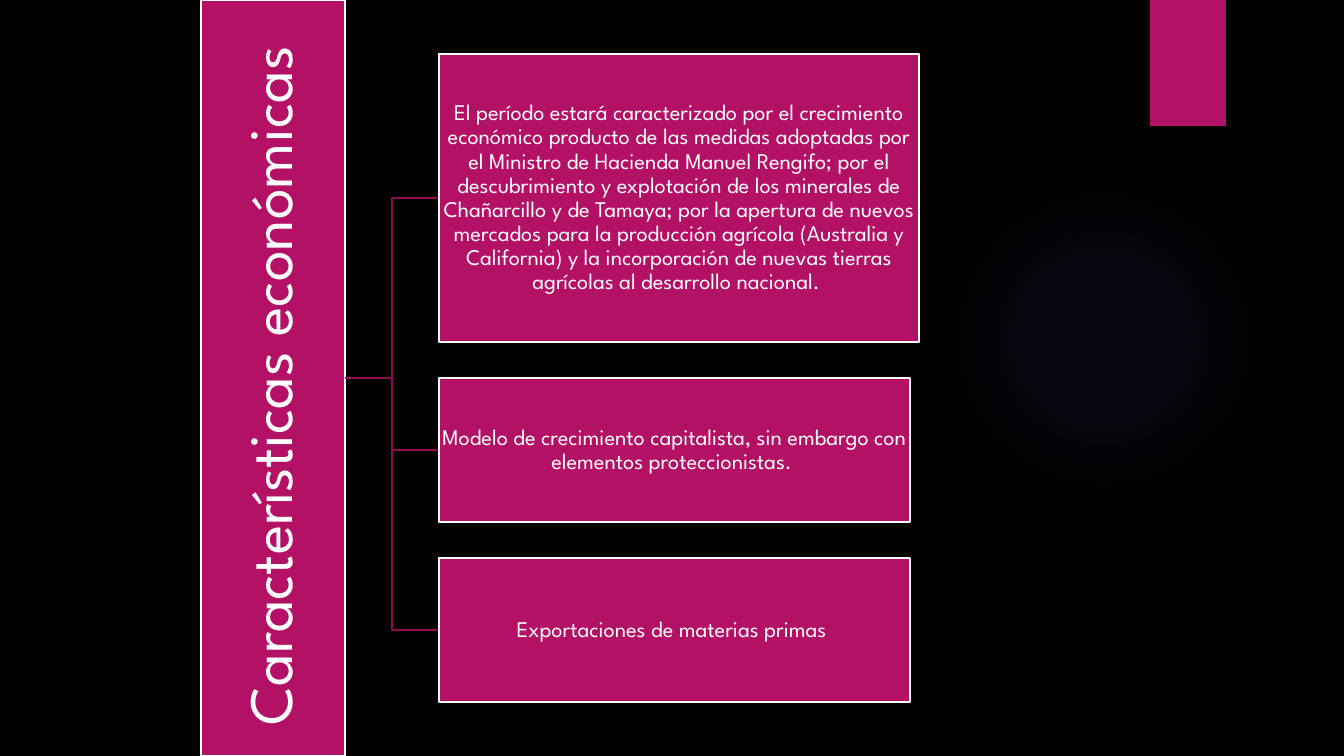
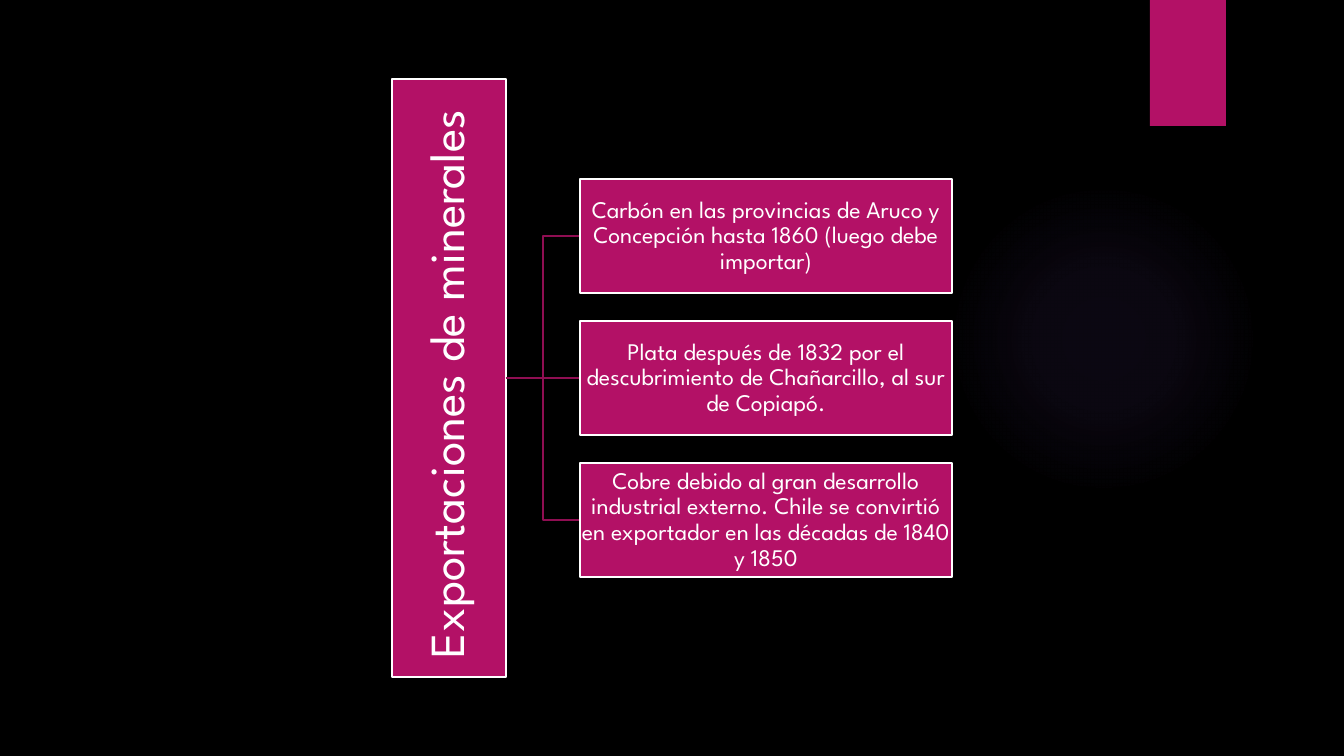
from lxml import etree
from pptx import Presentation
from pptx.dml.color import RGBColor
from pptx.enum.shapes import MSO_CONNECTOR, MSO_SHAPE
from pptx.enum.text import MSO_ANCHOR, MSO_AUTO_SIZE, PP_ALIGN
from pptx.oxml import parse_xml
from pptx.util import Pt

RECTANGLE, OVAL = MSO_SHAPE.RECTANGLE, MSO_SHAPE.OVAL
ELBOW, STRAIGHT = MSO_CONNECTOR.ELBOW, MSO_CONNECTOR.STRAIGHT
MIDDLE, CENTER = MSO_ANCHOR.MIDDLE, PP_ALIGN.CENTER

EMU_PER_PX = 914400 / 100.8
SLIDE_WIDTH, SLIDE_HEIGHT = 1344, 756
FONT = "League Spartan"
LINE_WIDTH = Pt(1.5)
COLORS = {
    "background": "000000",
    "accent": "B31166",
    "branch": "8F0E52",
    "glow": "9B6BF2",
    "text": "FFFFFF",
}
# Position and opacity of each glow stop, in percent
GLOW_STOPS = ((0, 7), (36, 6), (69, 0))
DRAWING_NS = "http://schemas.openxmlformats.org/drawingml/2006/main"

TREES = (
    {
        "title": "Características económicas ",
        "title_box": (201, 0, 144, 756),
        "title_size": 44,
        "left": 439,
        "gap": 36,
        "text_size": 16,
        # Width, height and text of each branch
        "branches": (
            (480, 288, "El período estará caracterizado por el crecimiento económico "
                       "producto de las medidas adoptadas por el Ministro de Hacienda "
                       "Manuel Rengifo; por el descubrimiento y explotación de los "
                       "minerales de Chañarcillo y de Tamaya; por la apertura de nuevos "
                       "mercados para la producción agrícola (Australia y California) y "
                       "la incorporación de nuevas tierras agrícolas al desarrollo "
                       "nacional. "),
            (471, 144, "Modelo de crecimiento capitalista, sin embargo con elementos "
                       "proteccionistas. "),
            (471, 144, "Exportaciones de materias primas "),
        ),
    },
    {
        "title": "Exportaciones de minerales ",
        "title_box": (392, 79, 114, 598),
        "title_size": 35,
        "left": 580,
        "gap": 28,
        "text_size": 17,
        "branches": (
            (372, 114, "Carbón en las provincias de Aruco y Concepción hasta 1860 "
                       "(luego debe importar)"),
            (372, 114, "Plata después de 1832 por el descubrimiento de Chañarcillo, "
                       "al sur de Copiapó."),
            (372, 114, "Cobre debido al gran desarrollo industrial externo. Chile se "
                       "convirtió en exportador en las décadas de 1840 y 1850"),
        ),
    },
)


def px(length):
    return round(length * EMU_PER_PX)


def color(name):
    return RGBColor.from_string(COLORS[name])


def add_plain_shape(slide, kind, box):
    shape = slide.shapes.add_shape(kind, *map(px, box))
    shape.shadow.inherit = False
    shape.fill.solid()
    shape.fill.fore_color.rgb = color("accent")
    shape.line.fill.background()
    return shape


def fill_with_glow(shape):
    stops = "".join(
        f'<a:gs pos="{position * 1000}"><a:srgbClr val="{COLORS["glow"]}">'
        f'<a:alpha val="{opacity * 1000}"/></a:srgbClr></a:gs>'
        for position, opacity in GLOW_STOPS
    )
    gradient = parse_xml(
        f'<a:gradFill xmlns:a="{DRAWING_NS}" rotWithShape="1"><a:gsLst>{stops}</a:gsLst>'
        '<a:path path="circle"><a:fillToRect l="50000" t="50000" r="50000" b="50000"/>'
        "</a:path></a:gradFill>"
    )
    properties = shape.element.spPr
    properties.replace(properties.find(f"{{{DRAWING_NS}}}solidFill"), gradient)


def decorate_layout(layout, slide):
    """Give the layout its background, glow and corner tab."""
    layout.background.fill.solid()
    layout.background.fill.fore_color.rgb = color("background")
    for placeholder in list(layout.placeholders)[1:]:
        layout.shapes.element.remove(placeholder.element)
    glow = add_plain_shape(slide, OVAL, (949, 184, 310, 310))
    fill_with_glow(glow)
    tab = add_plain_shape(slide, RECTANGLE, (1150, 0, 76, 126))
    # Shapes can only be created on a slide, so they are moved to the layout
    for shape in (glow, tab):
        layout.shapes.element.append(shape.element)


def format_text_box(shape, text, size, inset):
    """Accent box with a white outline and centred text."""
    shape.fill.solid()
    shape.fill.fore_color.rgb = color("accent")
    shape.line.color.rgb = color("text")
    shape.line.width = LINE_WIDTH
    frame = shape.text_frame
    frame.text = text
    frame.word_wrap = True
    frame.auto_size = MSO_AUTO_SIZE.NONE
    frame.vertical_anchor = MIDDLE
    frame.margin_left = frame.margin_right = px(inset)
    frame.margin_top = frame.margin_bottom = px(inset)
    paragraph = frame.paragraphs[0]
    paragraph.alignment = CENTER
    paragraph.line_spacing = 0.9
    paragraph.font.name = FONT
    paragraph.font.size = Pt(size)
    paragraph.font.color.rgb = color("text")


def place_title(slide, box, text, size):
    """Title reading upwards inside the given upright box."""
    left, top, width, height = box
    title = slide.shapes.title
    title.left = px(left + (width - height) / 2)
    title.top = px(top + (height - width) / 2)
    title.width, title.height = px(height), px(width)
    title.rotation = 270
    format_text_box(title, text, size, 3)


def add_branch_line(slide, start, end):
    kind = STRAIGHT if start[1] == end[1] else ELBOW
    line = slide.shapes.add_connector(kind, *map(px, start + end))
    line.line.color.rgb = color("branch")
    line.line.width = LINE_WIDTH
    etree.SubElement(line.element.spPr, f"{{{DRAWING_NS}}}effectLst")


def build_tree(slide, tree):
    """Title on the left, branches stacked around its middle."""
    left, top, width, height = tree["title_box"]
    place_title(slide, tree["title_box"], tree["title"], tree["title_size"])
    root = (left + width, top + height / 2)
    branches, gap = tree["branches"], tree["gap"]
    stack_height = sum(branch[1] for branch in branches) + gap * (len(branches) - 1)
    branch_top = root[1] - stack_height / 2
    for branch_width, branch_height, text in branches:
        add_branch_line(slide, root, (tree["left"], branch_top + branch_height / 2))
        box = (tree["left"], branch_top, branch_width, branch_height)
        shape = add_plain_shape(slide, RECTANGLE, box)
        format_text_box(shape, text, tree["text_size"], 1)
        branch_top += branch_height + gap


def main():
    presentation = Presentation()
    presentation.slide_width = px(SLIDE_WIDTH)
    presentation.slide_height = px(SLIDE_HEIGHT)
    layout = presentation.slide_layouts.get_by_name("Title Only")
    slides = [presentation.slides.add_slide(layout) for _ in TREES]
    decorate_layout(layout, slides[0])
    for slide, tree in zip(slides, TREES):
        build_tree(slide, tree)
    presentation.save("out.pptx")


if __name__ == "__main__":
    main()
